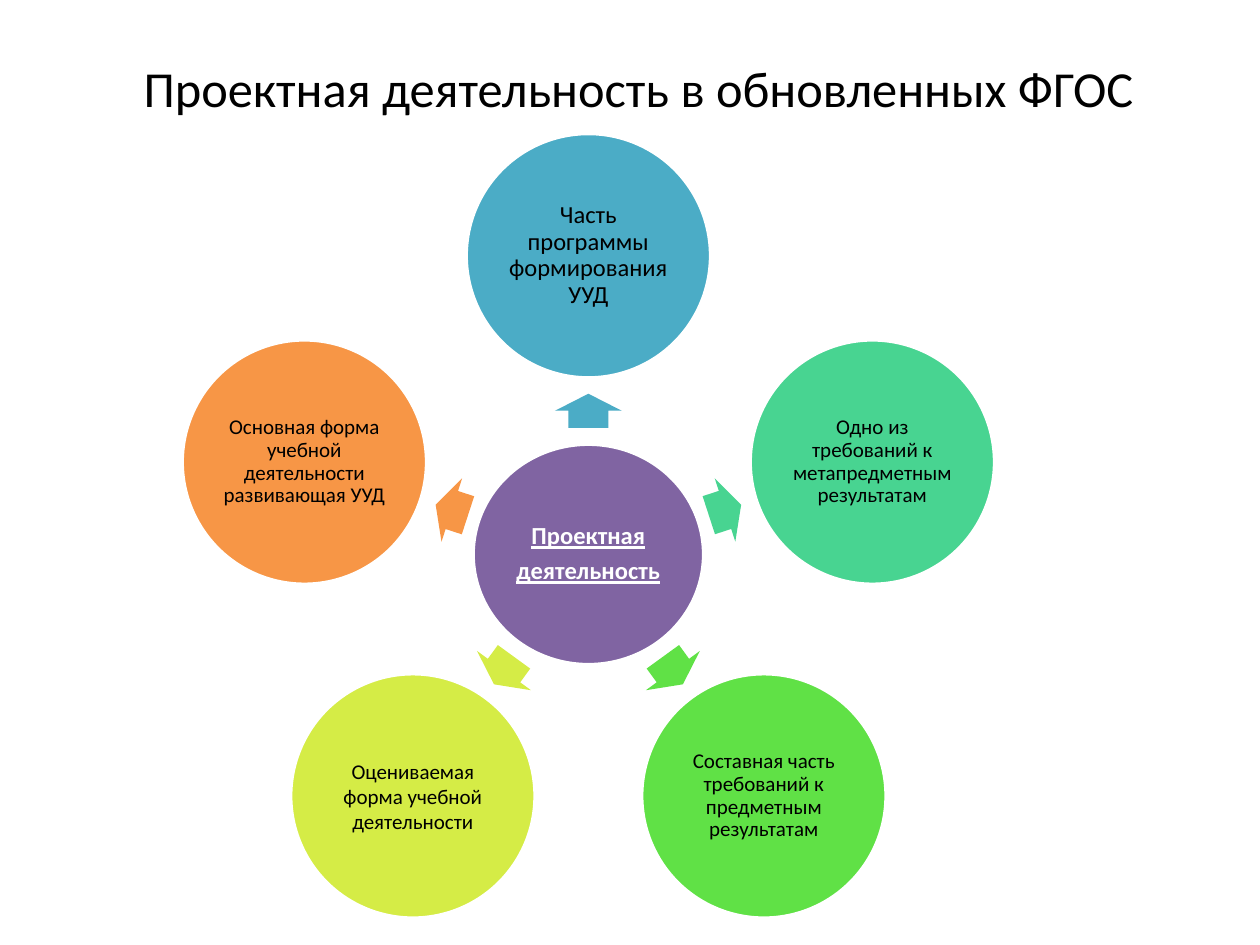
from math import cos, radians, sin

from pptx import Presentation
from pptx.dml.color import RGBColor
from pptx.enum.shapes import MSO_SHAPE
from pptx.enum.text import MSO_ANCHOR, PP_ALIGN
from pptx.util import Inches, Pt

OVAL = MSO_SHAPE.OVAL
ARROW = MSO_SHAPE.RIGHT_ARROW
MIDDLE = MSO_ANCHOR.MIDDLE
CENTER = PP_ALIGN.CENTER

FONT = "Calibri"
RING_RADIUS = 2.37
ARROW_RADIUS = 1.14
CIRCLE_SIZE = 1.94

# text, fill, font size, line spacing; clockwise from the top
TOPICS = [
    ("Часть программы формирования УУД", "4BACC6", 14, 0.9),
    ("Одно из требований к метапредметным результатам", "48D491", 12, 0.9),
    ("Составная часть требований к предметным результатам", "60E146", 12, 0.9),
    ("Оцениваемая форма учебной деятельности", "D5EC46", 12, 1.0),
    ("Основная форма учебной деятельности развивающая УУД", "F79646", 12, 0.9),
]


def color(value):
    return RGBColor.from_string(value)


def write_text(shape, lines, size, text_color="000000", spacing=1.0, emphasis=False):
    frame = shape.text_frame
    frame.word_wrap = True
    frame.vertical_anchor = MIDDLE
    frame.text = "\n".join(lines)
    for paragraph in frame.paragraphs:
        paragraph.alignment = CENTER
        paragraph.line_spacing = spacing
        font = paragraph.font
        font.name = FONT
        font.size = Pt(size)
        font.color.rgb = color(text_color)
        font.bold = font.underline = emphasis
    return frame


def add_centered_shape(slide, kind, x, y, width, height, fill):
    """Place a filled shape by its centre, in inches."""
    shape = slide.shapes.add_shape(
        kind, Inches(x - width / 2), Inches(y - height / 2), Inches(width), Inches(height)
    )
    shape.shadow.inherit = False
    shape.fill.solid()
    shape.fill.fore_color.rgb = color(fill)
    shape.line.fill.background()
    return shape


def add_circle(slide, x, y, width, height, fill, lines, size, **text_style):
    circle = add_centered_shape(slide, OVAL, x, y, width, height, fill)
    circle.line.color.rgb = color("FFFFFF")
    circle.line.width = Pt(2)
    frame = write_text(circle, lines, size, **text_style)
    frame.margin_left = frame.margin_right = Inches(0.02)
    frame.margin_top = frame.margin_bottom = Inches(0.02)
    return frame


def add_title(slide, left, top, width, height):
    box = slide.shapes.add_textbox(Inches(left), Inches(top), Inches(width), Inches(height))
    write_text(box, ["Проектная деятельность в обновленных ФГОС"], 28.8)


def add_radial_diagram(slide, x, y):
    """Draw the hub at the given centre, with arrows to a ring of topics."""
    hub = add_circle(
        slide, x, y, 1.83, 1.75, "8064A2", ["Проектная", "деятельность"], 14,
        text_color="FFFFFF", spacing=0.9, emphasis=True,
    )
    hub.paragraphs[0].space_after = Pt(4.9)

    for index, (text, fill, size, spacing) in enumerate(TOPICS):
        angle = index * 360 / len(TOPICS) - 90
        across, down = cos(radians(angle)), sin(radians(angle))
        arrow = add_centered_shape(
            slide, ARROW, x + ARROW_RADIUS * across, y + ARROW_RADIUS * down, 0.27, 0.53, fill
        )
        arrow.adjustments[0] = 0.6
        arrow.adjustments[1] = 0.5
        arrow.rotation = angle % 360
        add_circle(
            slide, x + RING_RADIUS * across, y + RING_RADIUS * down,
            CIRCLE_SIZE, CIRCLE_SIZE, fill, [text], size, spacing=spacing,
        )


def main():
    presentation = Presentation()
    presentation.slide_width = Inches(10)
    presentation.slide_height = Inches(7.5)
    slide = presentation.slides.add_slide(presentation.slide_layouts[6])
    add_title(slide, 0.57, 0.39, 9, 0.61)
    add_radial_diagram(slide, 4.67, 4.4)
    presentation.save("out.pptx")


if __name__ == "__main__":
    main()
